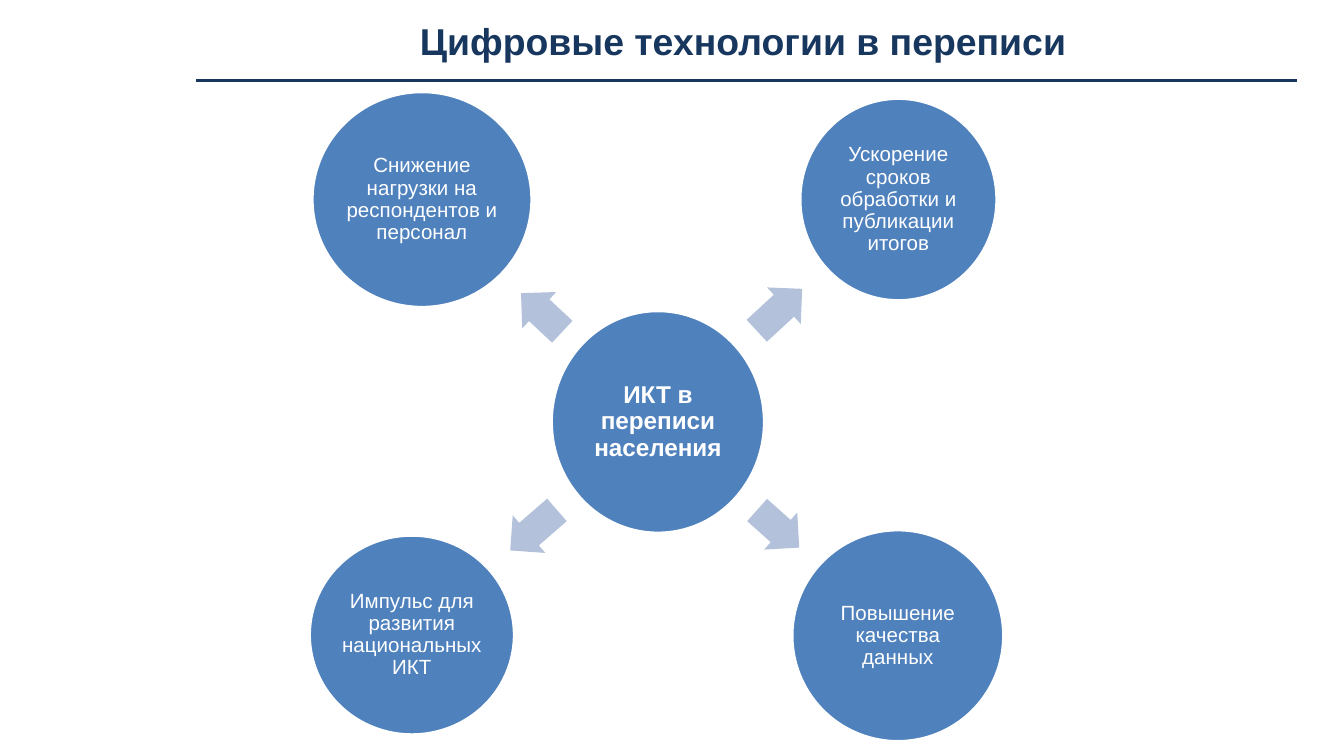
from lxml import etree
from pptx import Presentation
from pptx.dml.color import RGBColor
from pptx.enum import shapes, text
from pptx.oxml import ns
from pptx.util import Inches, Pt

NAVY = RGBColor(0x17, 0x37, 0x5E)
BLUE = RGBColor(0x4F, 0x81, 0xBD)
PALE = RGBColor(0xB3, 0xC1, 0xDB)
WHITE = RGBColor(0xFF, 0xFF, 0xFF)

HUB = ("ИКТ в переписи населения", (4.1, 2.31, 1.59, 1.66))
GOALS = [
    ("Снижение нагрузки на респондентов и персонал",
     (2.32, 0.68, 1.64, 1.61), (3.82, 2.14, 0.42, 0.37), 223.1),
    ("Ускорение сроков обработки и публикации итогов",
     (5.95, 0.73, 1.47, 1.51), (5.57, 2.12, 0.46, 0.37), 317.3),
    ("Повышение качества данных",
     (5.89, 3.94, 1.58, 1.58), (5.58, 3.75, 0.42, 0.37), 41.8),
    ("Импульс для развития национальных ИКТ",
     (2.3, 3.98, 1.53, 1.49), (3.74, 3.76, 0.46, 0.37), 139),
]


def write(shape, words, size=11, color=WHITE, bold=False, inset=0.01, space=0.9):
    """Fill a shape with one centred paragraph."""
    frame = shape.text_frame
    frame.word_wrap = True
    frame.auto_size = text.MSO_AUTO_SIZE.NONE
    frame.vertical_anchor = text.MSO_ANCHOR.MIDDLE
    frame.margin_left = frame.margin_right = Inches(inset)
    frame.margin_top = frame.margin_bottom = Inches(inset)
    para = frame.paragraphs[0]
    para.alignment = text.PP_ALIGN.CENTER
    para.line_spacing = space
    run = para.add_run()
    run.text = words
    font = run.font
    font.name, font.size, font.bold = "Arial", Pt(size), bold
    font.color.rgb = color


def draw(slide, kind, box, fill):
    """Add a filled preset shape without outline or shadow."""
    shape = slide.shapes.add_shape(kind, *map(Inches, box))
    shape.shadow.inherit = False
    shape.fill.solid()
    shape.fill.fore_color.rgb = fill
    shape.line.fill.background()
    return shape


def disc(slide, words, box, **style):
    """Add a white-edged circle with its label."""
    shape = draw(slide, shapes.MSO_SHAPE.OVAL, box, BLUE)
    shape.line.color.rgb = WHITE
    shape.line.width = Pt(2)
    write(shape, words, **style)


def arrow(slide, box, turn):
    """Add a block arrow turned away from the hub."""
    shape = draw(slide, shapes.MSO_SHAPE.RIGHT_ARROW, box, PALE)
    shape.adjustments[0] = 0.6
    shape.adjustments[1] = 0.5
    shape.rotation = turn


def rule(slide, left, right, top):
    """Add the line under the title."""
    line = slide.shapes.add_connector(
        shapes.MSO_CONNECTOR.STRAIGHT,
        Inches(left), Inches(top), Inches(right), Inches(top))
    line.line.color.rgb = NAVY
    line.line.width = Pt(1.5)
    etree.SubElement(line._element.spPr, ns.qn("a:effectLst"))


def head(slide, words):
    """Place and format the slide title."""
    title = slide.shapes.title
    title.left, title.top = Inches(1.46), Inches(0)
    title.width, title.height = Inches(8.14), Inches(0.6)
    write(title, words, size=20, color=NAVY, bold=True, inset=0.05, space=1.0)


def main():
    """Build the slide and save it."""
    deck = Presentation()
    deck.slide_width, deck.slide_height = Inches(10), Inches(10 * 9 / 16)
    slide = deck.slides.add_slide(deck.slide_layouts[5])
    rule(slide, 1.46, 9.65, 0.6)
    head(slide, "Цифровые технологии в переписи")
    disc(slide, *HUB, size=13, bold=True)
    for words, box, tip, turn in GOALS:
        arrow(slide, tip, turn)
        disc(slide, words, box)
    deck.save("out.pptx")


if __name__ == "__main__":
    main()
